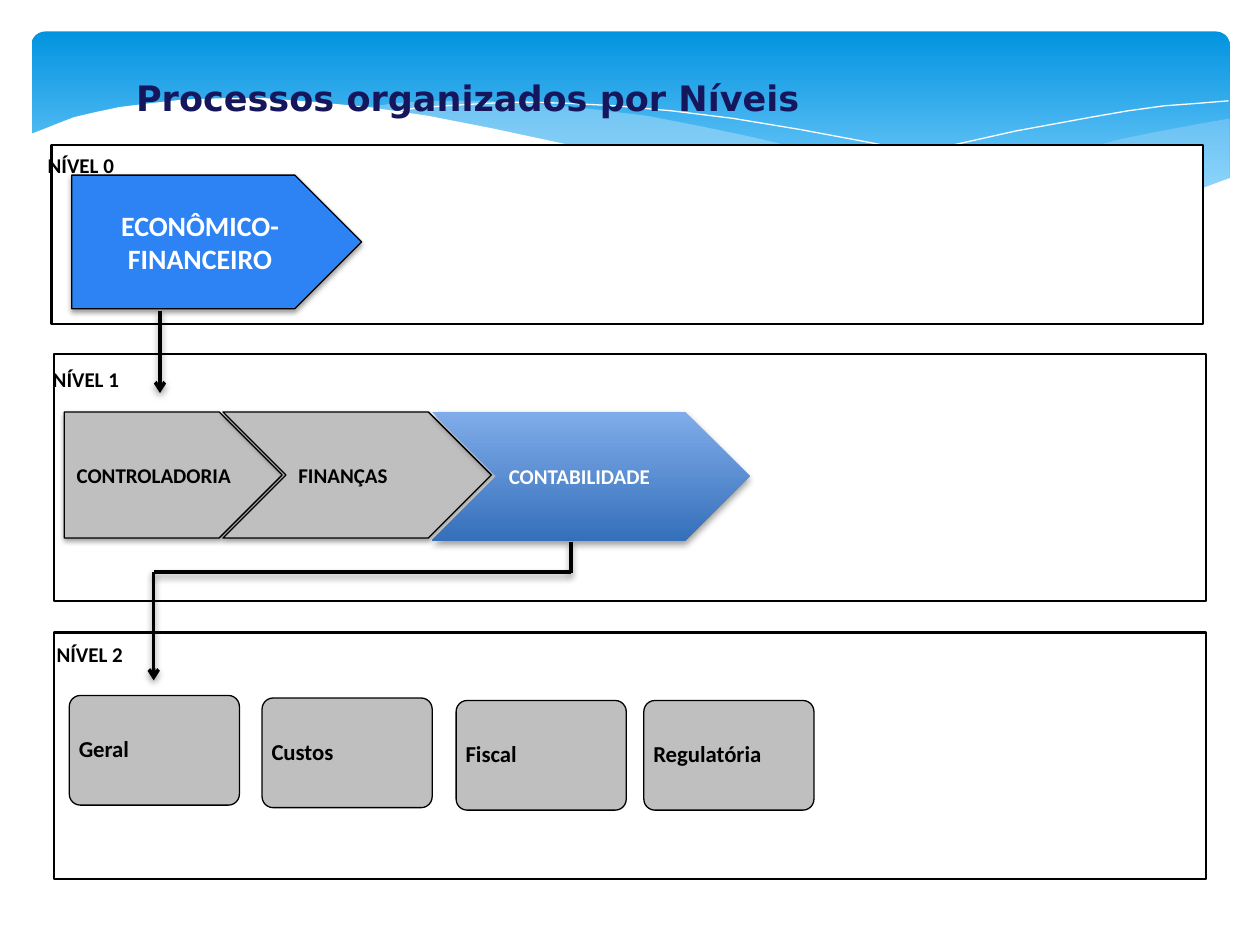
from lxml.etree import SubElement
from pptx import Presentation
from pptx.dml.color import RGBColor
from pptx.enum.shapes import MSO_CONNECTOR as Link, MSO_SHAPE as Form
from pptx.enum.text import MSO_ANCHOR as Anchor, MSO_AUTO_SIZE as Auto, PP_ALIGN as Align
from pptx.oxml.ns import qn
from pptx.util import Inches, Pt

tint = RGBColor.from_string


def dress(item, fill=None, line=None, width=0.75, alpha=None, shade=None):
    """Set fill, outline and shadow; a tuple of (place, colour) is a gradient."""
    props = item._element.spPr
    if isinstance(fill, tuple):
        item.fill.gradient()
        item.fill.gradient_angle = 270
        for stop, (place, color) in zip(item.fill.gradient_stops, fill):
            stop.position = place
            stop.color.rgb = tint(color)
    elif fill:
        item.fill.solid()
        item.fill.fore_color.rgb = tint(fill)
        if alpha:
            color = props.find(".//" + qn("a:srgbClr"))
            SubElement(color, qn("a:alpha"), val=str(alpha * 1000))
    elif hasattr(item, "fill"):
        item.fill.background()
    if line:
        item.line.color.rgb = tint(line)
        item.line.width = Pt(width)
    else:
        item.line.fill.background()
    effects = SubElement(props, qn("a:effectLst"))
    if shade:
        blur, dist = shade
        drop = SubElement(effects, qn("a:outerShdw"), blurRad=str(Pt(blur)),
                          dist=str(Pt(dist)), dir="5400000", rotWithShape="0")
        black = SubElement(drop, qn("a:srgbClr"), val="000000")
        SubElement(black, qn("a:alpha"), val="38000")


def write(item, text, size, color="000000", name="Calibri", align=Align.LEFT, **frame):
    body = item.text_frame
    for key, value in {"word_wrap": True, **frame}.items():
        setattr(body, key, value)
    para = body.paragraphs[0]
    para.alignment = align
    run = para.add_run()
    run.text = text
    style = {"size": Pt(size), "bold": True, "name": name}
    for key, value in style.items():
        setattr(run.font, key, value)
    run.font.color.rgb = tint(color)


deck = Presentation()
deck.slide_width, deck.slide_height = Inches(10), Inches(7.5)
slide = deck.slides.add_slide(deck.slide_layouts[5])
shapes = slide.shapes

# Banner with waves, points in hundredths of an inch
banner = shapes.add_shape(Form.ROUNDED_RECTANGLE, Inches(0.25), Inches(0.25),
                          Inches(9.51), Inches(1.56))
banner.adjustments[0] = 0.07
dress(banner, ((0, "0293E0"), (0.9, "83D3FE")))

waves = [
    ([(976, 94), (948, 99), (921, 104), (891, 110), (861, 118), (805, 131), (753, 143),
      (706, 152), (661, 160), (691, 164), (719, 167), (745, 169), (769, 171), (803, 172),
      (835, 172), (863, 170), (889, 166), (913, 162), (935, 156), (949, 152), (963, 147),
      (976, 141)], {"fill": "C6E7FC", "alpha": 29}),
    ([(893, 167), (866, 164), (807, 154), (741, 142), (668, 126), (598, 109), (555, 100),
      (514, 92), (465, 86), (420, 82), (380, 80), (344, 80), (313, 82), (286, 86),
      (323, 90), (362, 97), (404, 106), (449, 116), (530, 135), (601, 150), (650, 158),
      (695, 165), (736, 169), (773, 172), (807, 173), (838, 172), (867, 170)],
     {"fill": "C6E7FC", "alpha": 40}),
    ([(309, 90), (328, 86), (353, 84), (387, 82), (416, 81), (450, 82), (489, 84),
      (533, 88), (582, 94), (636, 103), (695, 114), (760, 128), (831, 145), (907, 166)],
     {"line": "FFFFFF", "width": 0}),
    ([(613, 151), (653, 141), (695, 130), (748, 117), (806, 104), (866, 93), (895, 88),
      (924, 84), (951, 82), (975, 80)], {"line": "FFFFFF", "width": 0}),
    ([(977, 141), (950, 151), (920, 159), (887, 166), (850, 170), (809, 171), (761, 170),
      (708, 165), (648, 156), (579, 144), (503, 128), (447, 114), (391, 102), (340, 92),
      (292, 85), (250, 81), (211, 78), (177, 78), (146, 79), (119, 82), (95, 85),
      (76, 89), (59, 93), (46, 98), (36, 102), (23, 107), (23, 224), (977, 224)],
     {"fill": "FFFFFF"}),
]
for points, look in waves:
    path = shapes.build_freeform(*points[0], scale=Inches(0.01))
    path.add_line_segments(points[1:], close="fill" in look)
    dress(path.convert_to_shape(), **look)

# Level panels and their labels
panels = [(0.41, 1.15, 1.42, 0.28, 1.16), (0.43, 2.81, 1.96, 0.32, 2.86),
          (0.43, 5.02, 1.96, 0.35, 5.04)]
for level, (left, top, high, x, y) in enumerate(panels):
    panel = shapes.add_shape(Form.RECTANGLE, Inches(left), Inches(top),
                             Inches(9.14), Inches(high))
    dress(panel, "FFFFFF", "000000", 1.25)
    label = shapes.add_textbox(Inches(x), Inches(y), Inches(0.95), Inches(0.3))
    write(label, f"NÍVEL {level}", 12, auto_size=Auto.SHAPE_TO_FIT_TEXT)

# Title, raised above the banner
title = shapes.title
shapes._spTree.append(title._element)
spot = {"left": 0.98, "top": 0.56, "width": 7.87, "height": 0.44}
for key, value in spot.items():
    setattr(title, key, Inches(value))
write(title, "Processos organizados por Níveis", 20, "16165D", "DejaVu Sans",
      vertical_anchor=Anchor.TOP, auto_size=Auto.SHAPE_TO_FIT_TEXT)

# Process arrows
gray = {"fill": "BFBFBF", "line": "000000"}
soft, deep = (3.1, 1.6), (4, 2)
steps = [
    (Form.PENTAGON, 0.57, 1.39, 2.3, 1.06, {"fill": "2D83F4", "line": "000000", "shade": soft},
     ("ECONÔMICO-FINANCEIRO", 16, "FFFFFF", "Calibri", Align.CENTER)),
    (Form.PENTAGON, 0.51, 3.27, 1.73, 1, {**gray, "shade": soft}, ("CONTROLADORIA", 12)),
    (Form.CHEVRON, 1.77, 3.27, 2.13, 1, {**gray, "shade": soft}, ("FINANÇAS", 12)),
    (Form.CHEVRON, 3.43, 3.27, 2.52, 1.02,
     {"fill": ((0, "80ACEA"), (1, "3570BA")), "shade": deep}, ("CONTABILIDADE", 12, "FFFFFF")),
]
for form, left, top, wide, high, look, words in steps:
    step = shapes.add_shape(form, Inches(left), Inches(top), Inches(wide), Inches(high))
    dress(step, **look)
    write(step, *words, vertical_anchor=Anchor.MIDDLE)

# Links between levels
links = [(1.27, 2.47, 1.27, 3.12, True), (1.22, 4.54, 1.22, 5.4, True),
         (1.22, 4.54, 4.53, 4.54, False), (4.53, 4.3, 4.53, 4.55, False)]
for *ends, tip in links:
    link = shapes.add_connector(Link.STRAIGHT, *map(Inches, ends))
    dress(link, line="000000", width=2, shade=deep)
    if tip:
        SubElement(link.line._get_or_add_ln(), qn("a:tailEnd"), type="arrow")

# Accounting areas
areas = [("Geral", 0.55, 5.52), ("Custos", 2.08, 5.54),
         ("Fiscal", 3.62, 5.56), ("Regulatória", 5.11, 5.56)]
pads = {f"margin_{side}": Inches(0.05) for side in ("left", "right", "top", "bottom")}
for text, left, top in areas:
    area = shapes.add_shape(Form.ROUNDED_RECTANGLE, Inches(left), Inches(top),
                            Inches(1.35), Inches(0.87))
    area.adjustments[0] = 0.1
    dress(area, **gray)
    write(area, text, 13, vertical_anchor=Anchor.MIDDLE, **pads)
    para = area.text_frame.paragraphs[0]
    para.line_spacing, para.space_after = 0.9, Pt(4.5)

deck.save("out.pptx")
